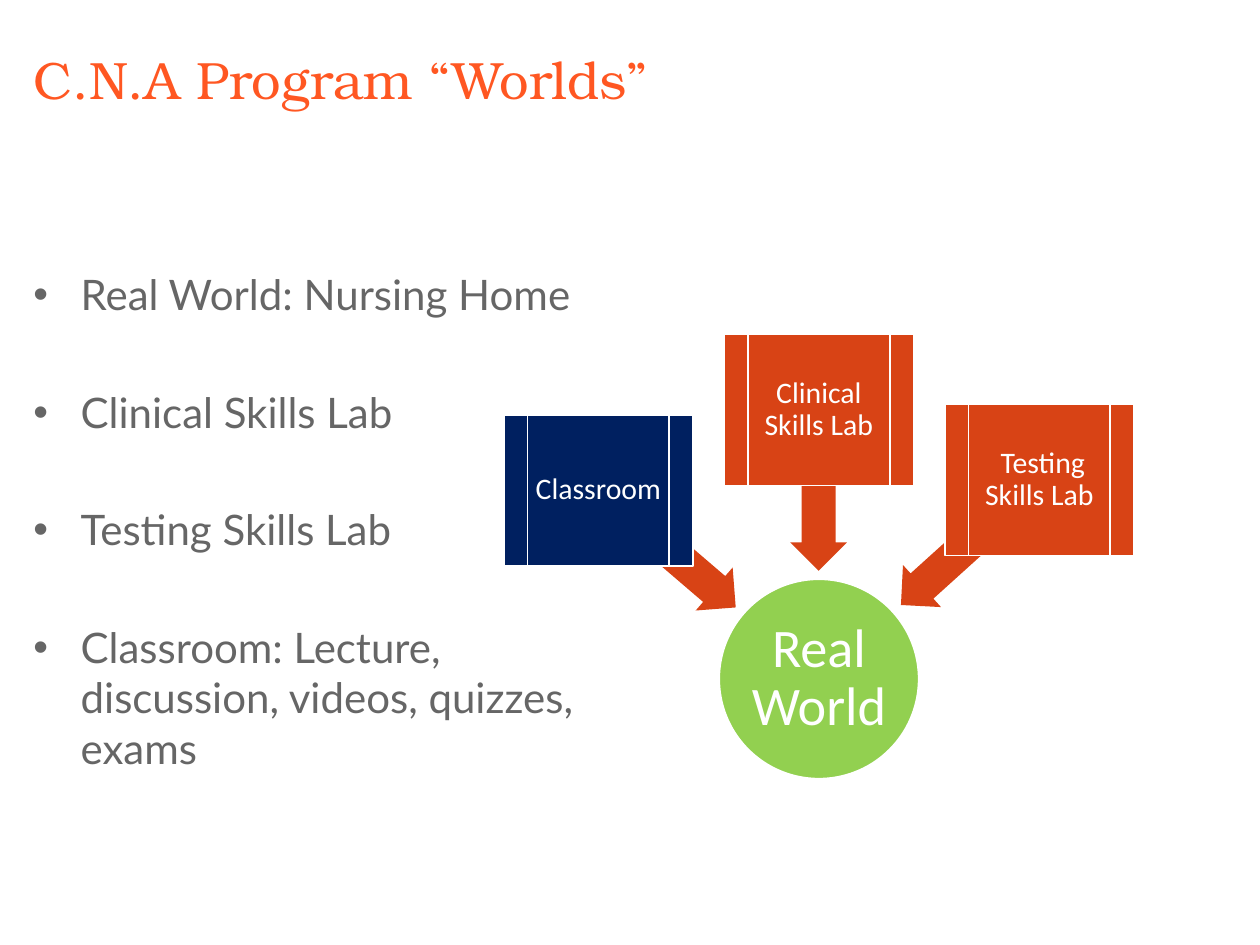
"""Build the C.N.A program worlds slide with three places leading to the real world."""
from lxml import etree
from pptx import Presentation
from pptx.dml.color import RGBColor
from pptx.enum.shapes import MSO_SHAPE
from pptx.enum.text import MSO_ANCHOR, MSO_AUTO_SIZE, PP_ALIGN
from pptx.oxml.ns import qn
from pptx.util import Pt

COLORS = {"title": "FF5722", "body": "666666", "orange": "D84315",
          "navy": "002060", "green": "92D050", "white": "FFFFFF"}


def style_font(font, name, size, color):
    font.name = name
    font.size = Pt(size)
    font.color.rgb = RGBColor.from_string(COLORS[color])


def add_shape(kind, left, top, width, height, fill, text="", size=17, inset=3):
    s = slide.shapes.add_shape(kind, Pt(left), Pt(top), Pt(width), Pt(height))
    s.shadow.inherit = False
    s.fill.solid()
    s.fill.fore_color.rgb = RGBColor.from_string(COLORS[fill])
    if not text:
        s.line.fill.background()
        return s
    s.line.color.rgb = RGBColor.from_string(COLORS["white"])
    s.line.width = Pt(1)
    tf = s.text_frame
    tf.text = text
    tf.word_wrap = True
    tf.vertical_anchor = MSO_ANCHOR.MIDDLE
    tf.margin_left = tf.margin_right = tf.margin_top = tf.margin_bottom = Pt(inset)
    p = tf.paragraphs[0]
    p.alignment = PP_ALIGN.CENTER
    p.line_spacing = 0.9
    style_font(p.runs[0].font, "Calibri", size, "white")
    return s


prs = Presentation()
prs.slide_width, prs.slide_height = Pt(720), Pt(540)
slide = prs.slides.add_slide(prs.slide_layouts[5])

title = slide.shapes.title
title.left, title.top, title.width, title.height = Pt(12), Pt(12), Pt(588), Pt(66)
tf = title.text_frame
tf.text = "C.N.A Program “Worlds”"
tf.auto_size = MSO_AUTO_SIZE.NONE
tf.vertical_anchor = MSO_ANCHOR.MIDDLE
p = tf.paragraphs[0]
p.alignment = PP_ALIGN.LEFT
style_font(p.runs[0].font, "TeX Gyre Bonum", 30, "title")

body = slide.shapes.add_textbox(Pt(12), Pt(150), Pt(336), Pt(336))
tf = body.text_frame
tf.word_wrap = True
topics = ["Real World: Nursing Home", "Clinical Skills Lab", "Testing Skills Lab",
          "Classroom: Lecture, discussion, videos, quizzes, exams"]
for i, topic in enumerate(topics):
    p = tf.add_paragraph() if i else tf.paragraphs[0]
    p.text = topic
    pPr = p._p.get_or_add_pPr()
    pPr.set("marL", str(Pt(27)))
    pPr.set("indent", str(-Pt(27)))
    etree.SubElement(pPr, qn("a:buFont"), typeface="Arial")
    etree.SubElement(pPr, qn("a:buChar"), char="•")
    if i:
        p.space_before = Pt(38.4)
    style_font(p.runs[0].font, "Lato", 24, "body")

add_shape(MSO_SHAPE.OVAL, 411, 331, 114, 114, "green", "Real World", 31, 1.5)

places = [("Classroom", "navy", 237, (329.8, 297.4, 103), 220.6),
          ("Clinical Skills Lab", "orange", 191, (422, 264.2, 91.5), 270),
          (" Testing Skills Lab", "orange", 231, (501.1, 293.8, 106.6), 317.9)]
for i, (name, fill, top, (arrow_left, arrow_top, length), angle) in enumerate(places):
    arrow = add_shape(MSO_SHAPE.LEFT_ARROW, arrow_left, arrow_top, length, 32.4, "orange")
    arrow.adjustments[0] = 0.6
    arrow.adjustments[1] = 0.5
    arrow.rotation = angle
    add_shape(MSO_SHAPE.FLOWCHART_PREDEFINED_PROCESS, 288 + 126 * i, top, 108, 86.4, fill, name)

prs.save("out.pptx")
